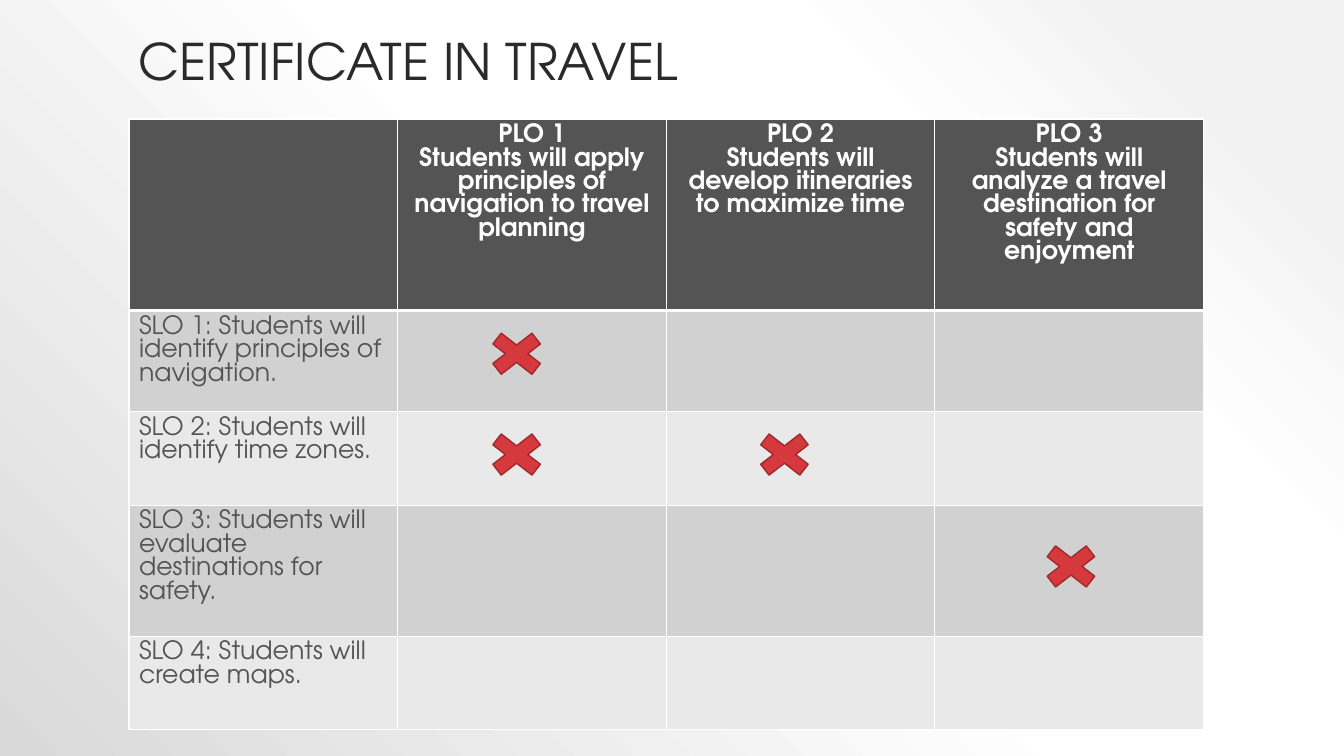
from lxml.etree import SubElement
from pptx import Presentation
from pptx.dml.color import RGBColor
from pptx.enum.shapes import MSO_SHAPE
from pptx.enum.text import MSO_ANCHOR, PP_ALIGN
from pptx.oxml.ns import qn
from pptx.util import Cm, Pt

FONT = "TeX Gyre Adventor"
WHITE = RGBColor(0xFF, 0xFF, 0xFF)
TITLE_INK = RGBColor(0x2A, 0x2A, 0x2A)
DARK = RGBColor(0x54, 0x54, 0x54)
BANDS = (RGBColor(0xD1, 0xD1, 0xD1), RGBColor(0xE9, 0xE9, 0xE9))
RED = RGBColor(0xD5, 0x39, 0x3D)
RED_EDGE = RGBColor(0x9E, 0x2A, 0x2D)
BACKDROP = (
    (10, RGBColor(0xF2, 0xF2, 0xF2)),
    (28, WHITE),
    (48, WHITE),
    (100, RGBColor(0xD9, 0xD9, 0xD9)),
)

LEFT, WIDTH = 3.25, 27.08
ROW_HEIGHTS = (4.65, 2.44, 2.36, 3.18, 2.36)
PROGRAM_OUTCOMES = (
    "Students will apply principles of navigation to travel planning",
    "Students will develop itineraries to maximize time",
    "Students will analyze a travel destination for safety and enjoyment",
)
STUDENT_OUTCOMES = (
    "Students will identify principles of navigation.",
    "Students will identify time zones.",
    "Students will evaluate destinations for safety.",
    "Students will create maps.",
)
# Left and top of each cross, in centimetres
CROSSES = ((12.07, 8.18), (18.82, 10.72), (26.04, 13.54), (12.07, 10.72))


def set_backdrop(s):
    """Radial gradient centred on the top right corner."""
    s.background.fill.gradient()
    grad = next(s.element.iter(qn("a:gradFill")))
    for child in list(grad):
        grad.remove(child)
    stops = SubElement(grad, qn("a:gsLst"))
    for percent, color in BACKDROP:
        stop = SubElement(stops, qn("a:gs"), pos=str(percent * 1000))
        SubElement(stop, qn("a:srgbClr"), val=str(color))
    circle = SubElement(grad, qn("a:path"), path="circle")
    SubElement(circle, qn("a:fillToRect"), l="100000", b="100000")


def add_run(p, text, size, color, bold=False):
    r = p.add_run()
    r.text = text
    r.font.name = FONT
    r.font.size = Pt(size)
    r.font.bold = bold
    r.font.color.rgb = color


def add_title(s, text):
    sp = s.shapes.add_textbox(Cm(LEFT), Cm(0.64), Cm(WIDTH), Cm(1.78))
    tf = sp.text_frame
    tf.word_wrap = True
    tf.vertical_anchor = MSO_ANCHOR.BOTTOM
    p = tf.paragraphs[0]
    p.line_spacing = 0.9
    add_run(p, text, 36, TITLE_INK)


def style_cell(cell, fill, top=1, bottom=1):
    tc_pr = cell._tc.get_or_add_tcPr()
    for side, points in (("L", 1), ("R", 1), ("T", top), ("B", bottom)):
        ln = SubElement(tc_pr, qn(f"a:ln{side}"), w=str(Pt(points)))
        SubElement(SubElement(ln, qn("a:solidFill")), qn("a:srgbClr"), val=str(WHITE))
    cell.fill.solid()
    cell.fill.fore_color.rgb = fill


def add_outcome_table(s):
    rows, cols = len(STUDENT_OUTCOMES) + 1, len(PROGRAM_OUTCOMES) + 1
    table = s.shapes.add_table(
        rows, cols, Cm(LEFT), Cm(3), Cm(WIDTH), Cm(sum(ROW_HEIGHTS))
    ).table
    for row, height in zip(table.rows, ROW_HEIGHTS):
        row.height = Cm(height)

    # Fills and rules
    for i in range(rows):
        for j in range(cols):
            fill = BANDS[(i - 1) % 2] if i else DARK
            style_cell(table.cell(i, j), fill, 3 if i == 1 else 1, 1 if i else 3)

    # Header row
    for j, outcome in enumerate(PROGRAM_OUTCOMES, 1):
        tf = table.cell(0, j).text_frame
        for p, text in ((tf.paragraphs[0], f"PLO {j}"), (tf.add_paragraph(), outcome)):
            p.alignment = PP_ALIGN.CENTER
            add_run(p, text, 18, WHITE, bold=True)

    # First column
    for i, outcome in enumerate(STUDENT_OUTCOMES, 1):
        p = table.cell(i, 0).text_frame.paragraphs[0]
        add_run(p, f"SLO {i}: {outcome}", 18, DARK)


def add_cross(s, left, top):
    sp = s.shapes.add_shape(
        MSO_SHAPE.MATH_MULTIPLY, Cm(left), Cm(top), Cm(1.9), Cm(1.47)
    )
    sp.shadow.inherit = False
    sp.fill.solid()
    sp.fill.fore_color.rgb = RED
    sp.line.color.rgb = RED_EDGE
    sp.line.width = Pt(1)


def main():
    prs = Presentation()
    prs.slide_width, prs.slide_height = Cm(33.87), Cm(19.05)
    s = prs.slides.add_slide(prs.slide_layouts[6])
    set_backdrop(s)
    add_title(s, "CERTIFICATE IN TRAVEL")
    add_outcome_table(s)
    for left, top in CROSSES:
        add_cross(s, left, top)
    prs.save("out.pptx")


if __name__ == "__main__":
    main()
